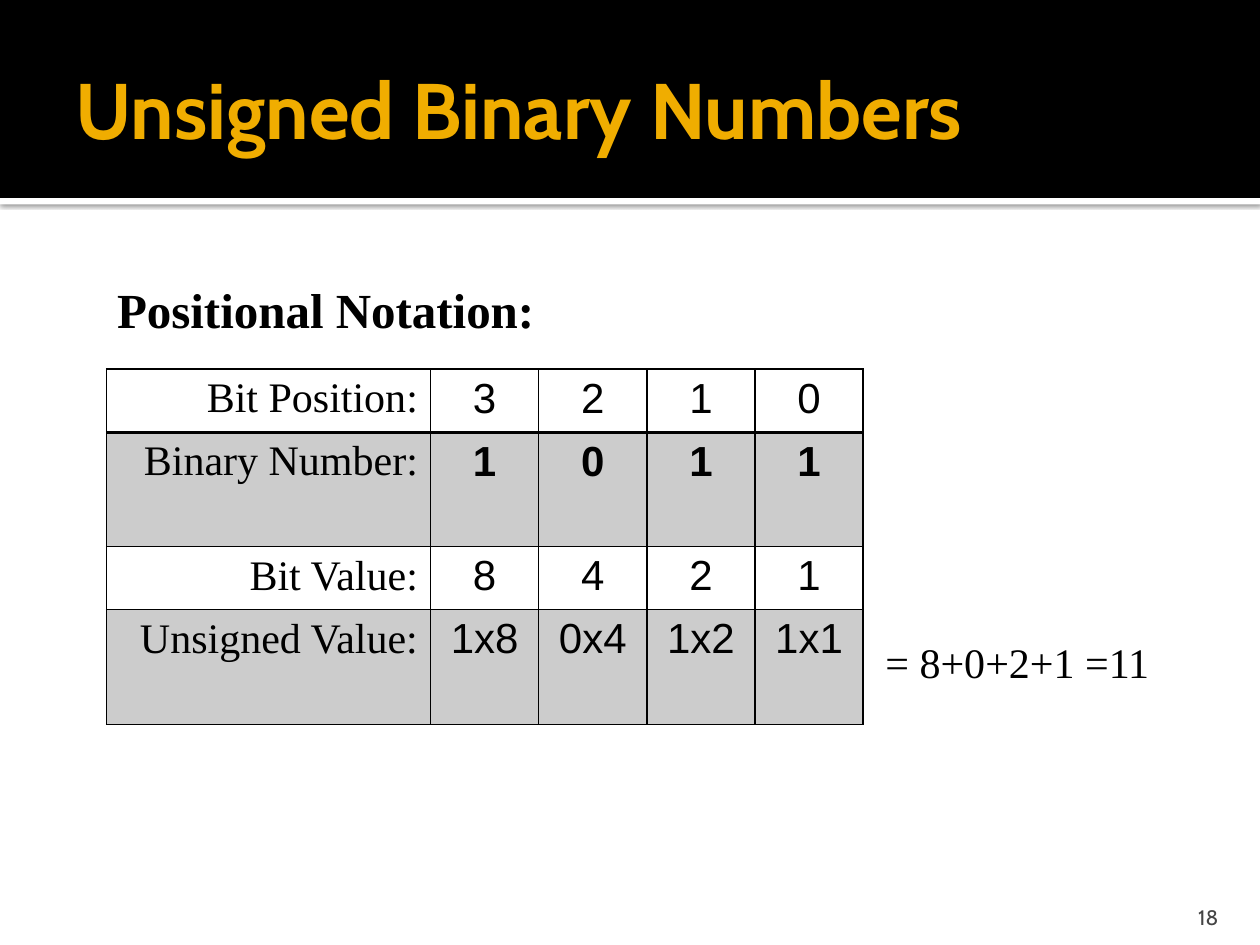
from lxml import etree
from pptx import Presentation
from pptx.dml.color import RGBColor
from pptx.enum.shapes import MSO_SHAPE
from pptx.enum.text import MSO_ANCHOR, MSO_AUTO_SIZE, PP_ALIGN
from pptx.oxml import parse_xml
from pptx.oxml.ns import nsdecls, qn
from pptx.util import Cm, Pt

RECT = MSO_SHAPE.RECTANGLE
TOP, MID, LOW = MSO_ANCHOR.TOP, MSO_ANCHOR.MIDDLE, MSO_ANCHOR.BOTTOM
LEFT, MAIN, RIGHT = PP_ALIGN.LEFT, PP_ALIGN.CENTER, PP_ALIGN.RIGHT
GROW = MSO_AUTO_SIZE.SHAPE_TO_FIT_TEXT
SERIF, SANS, HEAD = "Times New Roman", "Arial", "Cabin"
BLACK, WHITE, GOLD, GREY = "000000", "FFFFFF", "F0AD00", "454545"

# Content: label, values, bold values, shaded row
ROWS = [
    ("Bit Position:", ["3", "2", "1", "0"], False, False),
    ("Binary Number:", ["1", "0", "1", "1"], True, True),
    ("Bit Value:", ["8", "4", "2", "1"], False, False),
    ("Unsigned Value:", ["1x8", "0x4", "1x2", "1x1"], False, True),
]
# Text, box in cm, font, size, colour, bold, align, anchor, insets in cm, wrap
NOTES = [
    ("Unsigned Binary Numbers", (1.27, 0.43, 22.86, 3.48), HEAD, 45, GOLD,
     True, LEFT, MID, (0.25, 0.13, 0.13, 0.13), True),
    ("18", (22.78, 17.98, 2.03, 0.76), HEAD, 12, GREY,
     False, RIGHT, LOW, (0.25, 0.13, 0.25, 0), True),
    ("= 8+0+2+1 =11", (17.6, 12.7, 5.89, 1.27), SERIF, 24, BLACK,
     False, LEFT, TOP, (0.25, 0.13, 0.25, 0.13), False),
    ("Positional Notation:", (2.11, 5.51, 9.02, 1.45), SERIF, 28, BLACK,
     True, LEFT, TOP, (0.25, 0.13, 0.25, 0.13), False),
]
WIDE, SLIM = 6.53, 2.18   # column widths
TALL, LOWER = 2.31, 1.27  # shaded and plain row heights


def tint(code):
    return RGBColor.from_string(code)


def write(frame, text, font, size, code, bold, align):
    para = frame.paragraphs[0]
    para.alignment = align
    run = para.add_run()
    run.text = text
    run.font.name, run.font.size, run.font.bold = font, Pt(size), bold
    run.font.color.rgb = tint(code)


def band(slide, top, high, code):
    shape = slide.shapes.add_shape(RECT, 0, Cm(top), Cm(25.4), Cm(high))
    shape.shadow.inherit = False
    shape.fill.solid()
    shape.fill.fore_color.rgb = tint(code)
    shape.line.fill.background()
    return shape


def note(slide, text, box, font, size, code, bold, align, anchor, pads, wrap):
    frame = slide.shapes.add_textbox(*map(Cm, box)).text_frame
    frame.word_wrap = wrap
    frame.vertical_anchor = anchor
    if not wrap:
        frame.auto_size = GROW
    (frame.margin_left, frame.margin_top,
     frame.margin_right, frame.margin_bottom) = map(Cm, pads)
    write(frame, text, font, size, code, bold, align)


def edge(cell, side, width):
    cell._tc.get_or_add_tcPr().append(parse_xml(
        f'<a:{side} {nsdecls("a")} w="{Pt(width)}"><a:solidFill>'
        f'<a:srgbClr val="{BLACK}"/></a:solidFill></a:{side}>'))


def style(cell, row, shade):
    widths = {"lnL": 1, "lnR": 1, "lnT": 2 if row == 1 else 1,
              "lnB": 2 if row == 0 else 1}
    for side, width in widths.items():
        edge(cell, side, width)
    if not shade:
        cell.fill.background()
        return
    cell.fill.solid()
    cell.fill.fore_color.rgb = tint(BLACK)
    color = cell._tc.tcPr.find(qn("a:solidFill")).find(qn("a:srgbClr"))
    etree.SubElement(color, qn("a:alpha"), val="20000")


def grid(slide):
    highs = [TALL if row[3] else LOWER for row in ROWS]
    wides = [WIDE] + [SLIM] * len(ROWS[0][1])
    table = slide.shapes.add_table(
        len(highs), len(wides), Cm(2.15), Cm(7.44),
        Cm(sum(wides)), Cm(sum(highs))).table
    table.first_row = table.horz_banding = False
    for col, wide in zip(table.columns, wides):
        col.width = Cm(wide)
    for r, (label, vals, bold, shade) in enumerate(ROWS):
        table.rows[r].height = Cm(highs[r])
        for c, text in enumerate([label] + vals):
            cell = table.cell(r, c)
            style(cell, r, shade)
            if c == 0:
                write(cell.text_frame, text, SERIF, 24, BLACK, False, RIGHT)
            else:
                write(cell.text_frame, text, SANS, 24, BLACK, bold, MAIN)


def main():
    deck = Presentation()
    deck.slide_width, deck.slide_height = Cm(25.4), Cm(19.05)
    slide = deck.slides.add_slide(deck.slide_layouts[6])

    # Header: white strip with a soft shadow, then the black band
    strip = band(slide, 3.99, 0.13, WHITE)
    glow = strip._element.spPr.find(qn("a:effectLst"))
    glow.append(parse_xml(
        f'<a:outerShdw {nsdecls("a")} blurRad="{Pt(2.5)}" dist="{Pt(0.8)}" '
        f'dir="5400000" algn="t" rotWithShape="0"><a:srgbClr val="{BLACK}">'
        '<a:alpha val="60000"/></a:srgbClr></a:outerShdw>'))
    band(slide, 0, 3.99, BLACK)

    # Table and texts
    grid(slide)
    for item in NOTES:
        note(slide, *item)
    deck.save("out.pptx")


if __name__ == "__main__":
    main()
